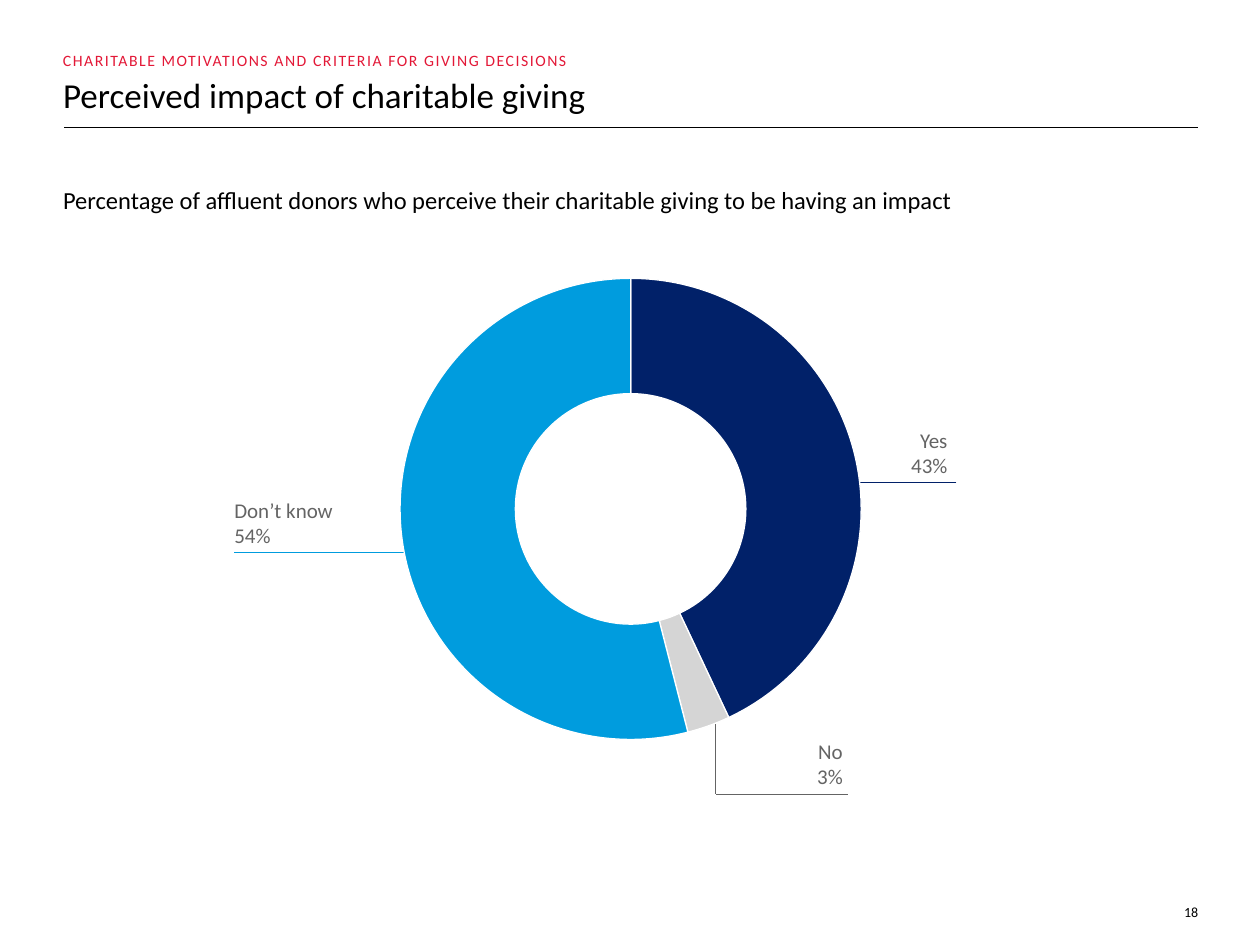
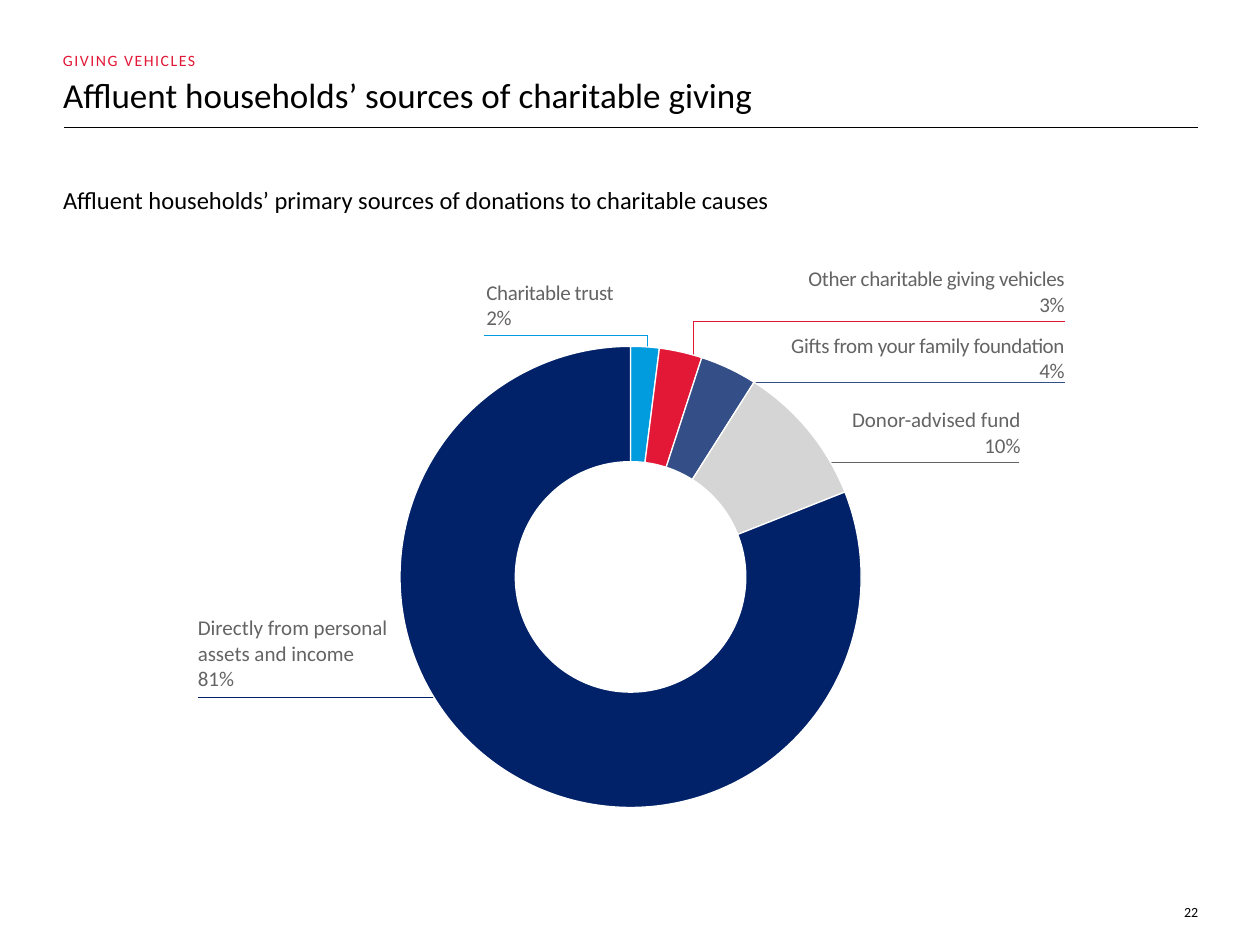
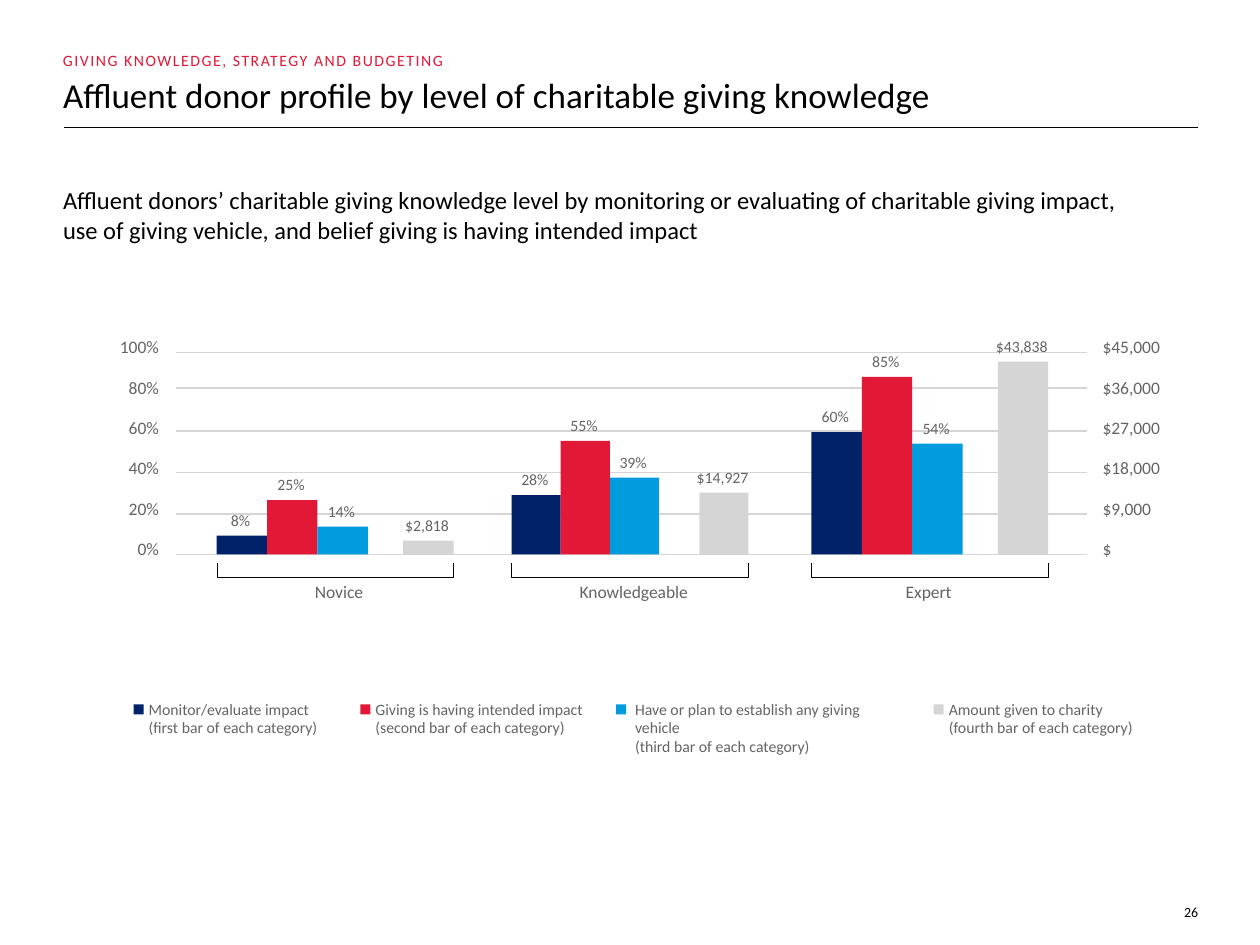
from lxml.etree import SubElement
from pptx import Presentation
from pptx.chart.data import CategoryChartData
from pptx.dml.color import RGBColor
from pptx.enum.chart import XL_CHART_TYPE
from pptx.enum.shapes import MSO_CONNECTOR, MSO_SHAPE
from pptx.enum.text import MSO_ANCHOR, MSO_AUTO_SIZE, PP_ALIGN
from pptx.oxml import parse_xml
from pptx.oxml.ns import nsdecls, qn
from pptx.util import Inches, Pt

BLACK = RGBColor(0x00, 0x00, 0x00)
WHITE = RGBColor(0xFF, 0xFF, 0xFF)
NAVY = RGBColor(0x01, 0x21, 0x69)
BLUE = RGBColor(0x00, 0x9C, 0xDE)
RED = RGBColor(0xE3, 0x18, 0x37)
SLATE = RGBColor(0x34, 0x4E, 0x87)
PALE = RGBColor(0xD5, 0xD5, 0xD5)
GREY = RGBColor(0x64, 0x64, 0x64)
FONT = "Calibri"
LEFT, MID, RIGHT = PP_ALIGN.LEFT, PP_ALIGN.CENTER, PP_ALIGN.RIGHT

IMPACT = {
    "page": "18",
    "topic": "CHARITABLE MOTIVATIONS AND CRITERIA FOR GIVING DECISIONS",
    "title": "Perceived impact of charitable giving",
    "lead": "Percentage of affluent donors who perceive their charitable giving to be having an impact",
    "lead_high": 0.34,
    "wrap": True,
    "ring": (2.19, 2.07, 5.63),
    "parts": [(43, NAVY), (3, PALE), (54, BLUE)],
    "notes": [
        (["Yes", "43%"], (7.12, 3.39, 0.4, 0.43), RIGHT, 0),
        (["Don’t know", "54%"], (1.86, 3.95, 0.9, 0.43), LEFT, 0),
        (["No", "3%"], (6.36, 5.86, 0.33, 0.43), RIGHT, 0),
    ],
    "leads": [
        (BLUE, [(1.86, 4.38), (3.41, 4.38)]),
        (NAVY, [(7.59, 3.83), (6.73, 3.83)]),
        (GREY, [(6.73, 6.3), (5.68, 6.3), (5.68, 5.62)]),
    ],
}
SOURCES = {
    "page": "22",
    "topic": "GIVING VEHICLES",
    "title": "Affluent households’ sources of charitable giving",
    "lead": "Affluent households’ primary sources of donations to charitable causes",
    "lead_high": 0.28,
    "wrap": False,
    "ring": (1.98, 2.61, 6.05),
    "parts": [(2, BLUE), (3, RED), (4, SLATE), (10, PALE), (81, NAVY)],
    "notes": [
        (["Donor-advised fund", "10%"], (6.75, 3.23, 1.35, 0.45), RIGHT, 0),
        (["Directly from personal \nassets and income", "81%"],
         (1.57, 4.88, 1.56, 0.66), LEFT, 0),
        (["Charitable trust", "2%"], (3.86, 2.22, 1.02, 0.45), LEFT, -0.2),
        (["Other charitable giving vehicles", "3%"], (6.4, 2.11, 2.05, 0.45), RIGHT, -0.2),
        (["Gifts from your family foundation", "4%"], (6.26, 2.64, 2.19, 0.4), RIGHT, -0.2),
    ],
    "leads": [
        (NAVY, [(1.57, 5.53), (3.86, 5.53)]),
        (GREY, [(8.09, 3.67), (6.46, 3.67)]),
        (SLATE, [(8.45, 3.03), (5.86, 3.03)]),
        (RED, [(8.45, 2.55), (5.5, 2.55), (5.5, 2.9)]),
        (BLUE, [(3.84, 2.66), (5.14, 2.66), (5.14, 2.8)]),
    ],
}
PROFILE = {
    "page": "26",
    "topic": "GIVING KNOWLEDGE, STRATEGY AND BUDGETING",
    "title": "Affluent donor profile by level of charitable giving knowledge",
    "lead": "Affluent donors’ charitable giving knowledge level by monitoring or evaluating of "
            "charitable giving impact, \nuse of giving vehicle, and belief giving is having "
            "intended impact",
    "lead_high": 0.54,
}
GRID = [2.8, 3.08, 3.42, 3.75, 4.08, 4.4]
SCALE = [("100%", "$45,000"), ("80%", "$36,000"), ("60%", "$27,000"),
         ("40%", "$18,000"), ("20%", "$9,000"), ("0%", "$")]
LEVELS = [
    ("Novice", 1.72, 0.4, 2.69,
     [("8%", 0.15), ("25%", 0.43), ("14%", 0.22), ("$2,818", 0.11)]),
    ("Knowledgeable", 4.06, 0.39, 5.03,
     [("28%", 0.47), ("55%", 0.9), ("39%", 0.61), ("$14,927", 0.49)]),
    ("Expert", 6.44, 0.4, 7.37,
     [("60%", 0.97), ("85%", 1.41), ("54%", 0.88), ("$43,838", 1.53)]),
]
SHADES = [NAVY, RED, BLUE, PALE]
SPAN, BASE = 1.88, 4.4
KEYS = [
    ("Monitor/evaluate impact\n(first bar of each category)", 1.06, 1.18, 1.47),
    ("Giving is having intended impact\n(second bar of each category)", 2.86, 2.98, 1.7),
    ("Have or plan to establish any giving vehicle\n(third bar of each category)",
     4.89, 5.04, 2.1),
    ("Amount given to charity\n(fourth bar of each category)", 7.41, 7.53, 1.59),
]


def inch(*nums):
    return [Inches(n) for n in nums]


def write(frame, paras, size, color=GREY, align=LEFT, track=0,
          pad=(0, 0, 0, 0), anchor=MSO_ANCHOR.TOP, wrap=True):
    frame.word_wrap = wrap
    frame.auto_size = MSO_AUTO_SIZE.NONE
    frame.vertical_anchor = anchor
    (frame.margin_left, frame.margin_top,
     frame.margin_right, frame.margin_bottom) = inch(*pad)
    for i, text in enumerate(paras):
        para = frame.add_paragraph() if i else frame.paragraphs[0]
        para.alignment = align
        para.space_before = Pt(0)
        for j, part in enumerate(text.split("\n")):
            if j:
                para.add_line_break()
            run = para.add_run()
            run.text = part
            run.font.name = FONT
            run.font.size = Pt(size)
            run.font.color.rgb = color
            if track:
                run._r.get_or_add_rPr().set("spc", str(round(track * 100)))


def label(slide, box, paras, size, **style):
    write(slide.shapes.add_textbox(*inch(*box)).text_frame, paras, size, **style)


def rule(slide, start, end, color, width):
    line = slide.shapes.add_connector(MSO_CONNECTOR.STRAIGHT, *inch(*start, *end))
    line.line.color.rgb = color
    line.line.width = Pt(width)
    SubElement(line._element.spPr, qn("a:effectLst"))


def block(slide, box, color):
    rect = slide.shapes.add_shape(MSO_SHAPE.RECTANGLE, *inch(*box))
    rect.shadow.inherit = False
    rect.fill.solid()
    rect.fill.fore_color.rgb = color
    rect.line.fill.background()


def place(shape, *box):
    shape.left, shape.top, shape.width, shape.height = inch(*box)
    return shape.text_frame


def start(deck, data):
    slide = deck.slides.add_slide(deck.slide_layouts[1])
    rule(slide, (0.51, 1.01), (9.51, 1.01), BLACK, 0.5)
    title = place(slide.shapes.title, 0.5, 0.58, 7, 0.34)
    write(title, [data["title"]], 20, color=BLACK, anchor=MSO_ANCHOR.BOTTOM)
    label(slide, (0.5, 0.4, 7, 0.2), [data["topic"]], 9, color=RED, track=0.87)
    lead = place(slide.placeholders[1], 0.5, 1.47, 9, data["lead_high"])
    props = lead.paragraphs[0]._p.get_or_add_pPr()
    props.set("marL", "0")
    props.set("indent", "0")
    SubElement(props, qn("a:buNone"))
    write(lead, [data["lead"]], 14, color=BLACK, pad=(0, 0, 0, 0.05))
    label(slide, (9.16, 7.17, 0.45, 0.13), [data["page"]], 8, color=BLACK, align=RIGHT,
          pad=(0.1, 0.05, 0.1, 0.05), anchor=MSO_ANCHOR.MIDDLE)
    return slide


def ring(slide, data):
    left, top, wide = data["ring"]
    high, size = 3.94, 3.66
    parts = data["parts"]
    table = CategoryChartData()
    table.categories = [str(i + 1) for i in range(len(parts))]
    table.add_series("Series 1", [value for value, color in parts])
    chart = slide.shapes.add_chart(
        XL_CHART_TYPE.DOUGHNUT, *inch(left, top, wide, high), table).chart
    chart.has_legend = False
    chart.has_title = False
    chart.font.name = FONT
    chart.font.size = Pt(10)
    chart.font.color.rgb = BLACK
    plot = chart.plots[0]
    plot.vary_by_categories = True
    for i, (value, color) in enumerate(parts):
        look = plot.series[0].points[i].format
        look.fill.solid()
        look.fill.fore_color.rgb = color
        look.line.color.rgb = WHITE
        look.line.width = Pt(0.75)
    area = chart._chartSpace.find(".//" + qn("c:plotArea"))
    area.find(".//" + qn("c:holeSize")).set("val", "72")
    for old in area.findall(qn("c:layout")):
        area.remove(old)
    w, h = size / wide, size / high
    dims = "".join(f'<c:{tag} val="{val:.4f}"/>' for tag, val in
                   [("x", (1 - w) / 2), ("y", (1 - h) / 2), ("w", w), ("h", h)])
    area.insert(0, parse_xml(
        f'<c:layout {nsdecls("c")}><c:manualLayout><c:layoutTarget val="inner"/>'
        f'<c:xMode val="edge"/><c:yMode val="edge"/>{dims}</c:manualLayout></c:layout>'))


def donut(deck, data):
    slide = start(deck, data)
    for paras, box, align, track in data["notes"]:
        label(slide, box, paras, 12, align=align, track=track, wrap=data["wrap"])
    for color, points in data["leads"]:
        for a, b in zip(points, points[1:]):
            rule(slide, a, b, color, 0.25)
    ring(slide, data)


def bracket(slide, left, top):
    right, low = left + SPAN, top + 0.11
    pen = slide.shapes.build_freeform(*inch(right, top), scale=1.0)
    pen.add_line_segments([inch(*p) for p in [(right, low), (left, low), (left, top)]],
                          close=False)
    shape = pen.convert_to_shape()
    shape.shadow.inherit = False
    shape.fill.background()
    shape.line.color.rgb = BLACK
    shape.line.width = Pt(0.25)


def bars(deck, data):
    slide = start(deck, data)
    for y in GRID:
        rule(slide, (1.4, y), (8.63, y), PALE, 0.75)
    for i, (share, money) in enumerate(SCALE):
        y = 2.67 + 0.32 * i
        label(slide, (0.74, y, 0.52, 0.17), [share], 10, align=RIGHT)
        label(slide, (8.75, y, 0.52, 0.17), [money], 10)
    for name, left, bar, mid, values in LEVELS:
        shifts = [0, bar, 2 * bar, SPAN - bar]
        for (text, high), shift, color in zip(values, shifts, SHADES):
            x, y = left + shift, BASE - high
            block(slide, (x, y, bar, high), color)
            label(slide, (x - 0.09, y - 0.2, bar + 0.16, 0.15), [text], 9, align=MID)
        bracket(slide, left, 4.47)
        label(slide, (mid - 0.5, 4.61, 1, 0.17), [name], 10, align=MID)
    for (text, mark, left, wide), color in zip(KEYS, SHADES):
        block(slide, (mark, 5.59, 0.08, 0.08), color)
        label(slide, (left, 5.55, wide, 0.3), [text], 9)


def main():
    deck = Presentation()
    deck.slide_width, deck.slide_height = inch(10, 7.5)
    donut(deck, IMPACT)
    donut(deck, SOURCES)
    bars(deck, PROFILE)
    deck.save("out.pptx")


if __name__ == "__main__":
    main()
